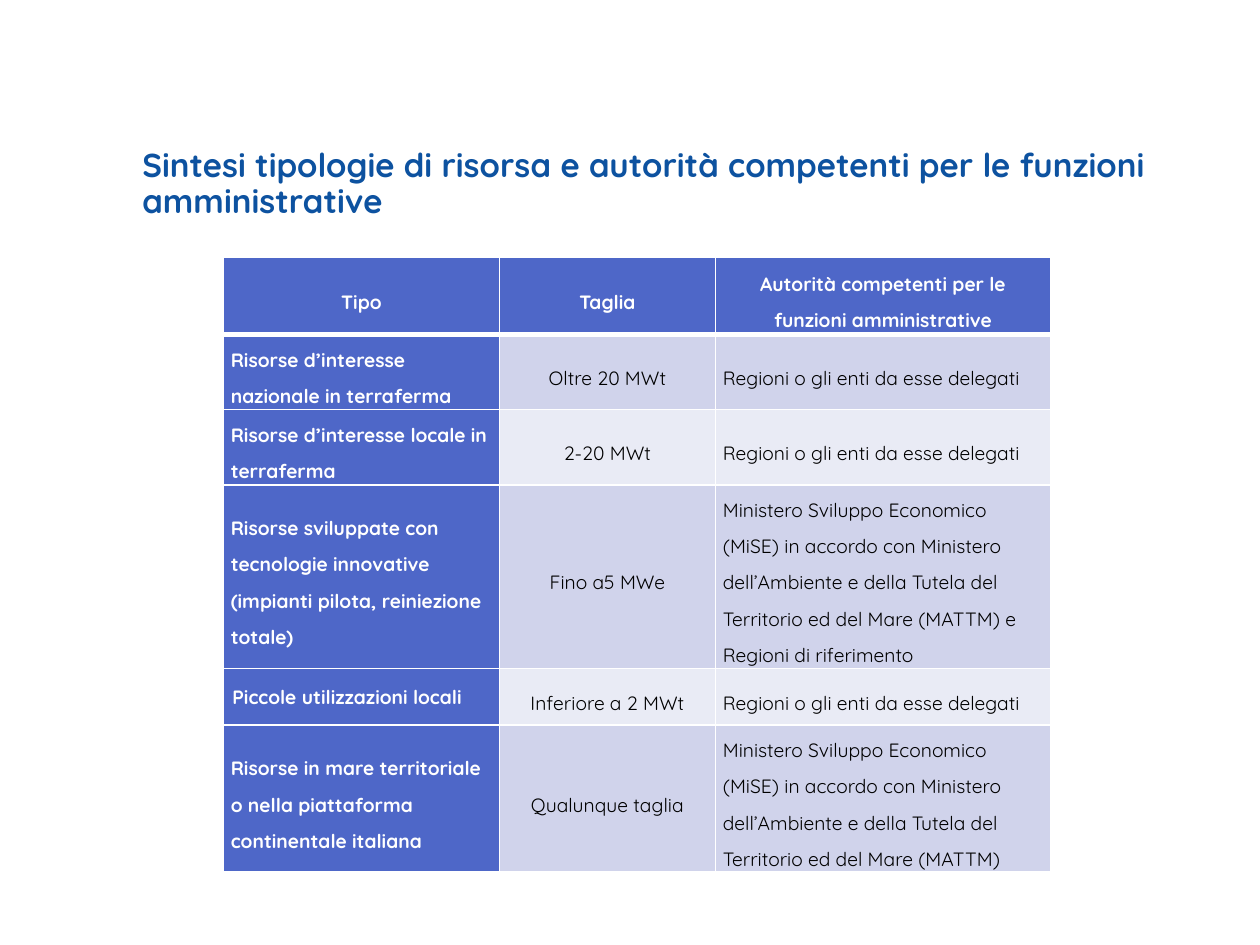
import pptx
import pptx.util
import pptx.dml.color
import pptx.enum.text
import pptx.oxml
import pptx.oxml.ns
from dataclasses import dataclass

Pt = pptx.util.Pt
RGB = pptx.dml.color.RGBColor.from_string
ALIGN = pptx.enum.text.PP_ALIGN
MIDDLE = pptx.enum.text.MSO_ANCHOR.MIDDLE


@dataclass(frozen=True)
class Theme:
    font: str = "Quicksand"
    title_size: float = 18.9
    table_size: float = 11
    title: str = "0D52A0"
    accent: str = "4E67C8"
    bands: tuple = ("D0D3EB", "E9EBF5")
    white: str = "FFFFFF"
    text: str = "000000"


THEME = Theme()

TITLE = "Sintesi tipologie di risorsa e autorità competenti per le funzioni amministrative"
HEADER = ("Tipo", "Taglia", "Autorità competenti per le funzioni amministrative")
REGIONS = "Regioni o gli enti da esse delegati"
MINISTRIES = ("Ministero Sviluppo Economico (MiSE) in accordo con Ministero "
              "dell’Ambiente e della Tutela del Territorio ed del Mare (MATTM)")
SMALL_USES = "Piccole utilizzazioni locali"
RESOURCES = (
    ("Risorse d’interesse nazionale in terraferma", "Oltre 20 MWt", REGIONS),
    ("Risorse d’interesse locale in terraferma", "2-20 MWt", REGIONS),
    ("Risorse sviluppate con tecnologie innovative (impianti pilota, reiniezione totale)",
     "Fino a5 MWe", MINISTRIES + " e Regioni di riferimento"),
    (SMALL_USES, "Inferiore a 2 MWt", REGIONS),
    ("Risorse in mare territoriale o nella piattaforma continentale italiana",
     "Qualunque taglia", MINISTRIES),
)
COLUMN_WIDTHS = (157.9, 123.3, 191.8)
# Tall enough for every line of the longest cell in the row
ROW_HEIGHTS = (44, 43, 43, 105, 32.4, 84)


def style_text(paragraph, size, color, bold):
    font = paragraph.font
    font.name, font.size, font.bold = THEME.font, Pt(size), bold
    font.color.rgb = RGB(color)


def add_title(slide, left, top, width, height):
    frame = slide.shapes.add_textbox(Pt(left), Pt(top), Pt(width), Pt(height)).text_frame
    frame.word_wrap = True
    frame.vertical_anchor = MIDDLE
    heading = frame.paragraphs[0]
    heading.text = TITLE
    heading.line_spacing = 0.9
    style_text(heading, THEME.title_size, THEME.title, True)


def add_borders(cell, top, bottom):
    properties = cell._tc.get_or_add_tcPr()
    for side, width in (("L", 1), ("R", 1), ("T", top), ("B", bottom)):
        properties.append(pptx.oxml.parse_xml(
            f'<a:ln{side} {pptx.oxml.ns.nsdecls("a")} w="{Pt(width)}"><a:solidFill>'
            f'<a:srgbClr val="{THEME.white}"/></a:solidFill></a:ln{side}>'))


def fill_cell(cell, text, row, column):
    emphasised = row == 0 or column == 0
    add_borders(cell, top=3 if row == 1 else 1, bottom=3 if row == 0 else 1)
    cell.fill.solid()
    cell.fill.fore_color.rgb = RGB(THEME.accent if emphasised else THEME.bands[(row - 1) % 2])
    cell.margin_left = cell.margin_right = Pt(4.3)
    cell.margin_top = cell.margin_bottom = Pt(0)
    cell.vertical_anchor = MIDDLE

    entry = cell.text_frame.paragraphs[0]
    entry.text = text
    entry.alignment = ALIGN.CENTER if row == 0 or column == 1 else ALIGN.LEFT
    # The single-line type keeps plain spacing and a hair of indent
    if text == SMALL_USES:
        entry._p.get_or_add_pPr().set("marL", str(Pt(0.9)))
    else:
        entry.line_spacing = 1.5
    style_text(entry, THEME.table_size, THEME.white if emphasised else THEME.text, emphasised)


def add_resource_table(slide, left, top):
    rows = (HEADER, *RESOURCES)
    table = slide.shapes.add_table(
        len(rows), len(HEADER), Pt(left), Pt(top),
        Pt(sum(COLUMN_WIDTHS)), Pt(sum(ROW_HEIGHTS))).table
    for column, width in zip(table.columns, COLUMN_WIDTHS):
        column.width = Pt(width)
    for row, height in zip(table.rows, ROW_HEIGHTS):
        row.height = Pt(height)
    for r, texts in enumerate(rows):
        for c, text in enumerate(texts):
            fill_cell(table.cell(r, c), text, r, c)


def main():
    presentation = pptx.Presentation()
    presentation.slide_width, presentation.slide_height = Pt(720), Pt(540)
    slide = presentation.slides.add_slide(presentation.slide_layouts[6])
    add_title(slide, 74.2, 89.3, 625, 32.4)
    add_resource_table(slide, 127.6, 147.1)
    presentation.save("out.pptx")


if __name__ == "__main__":
    main()
